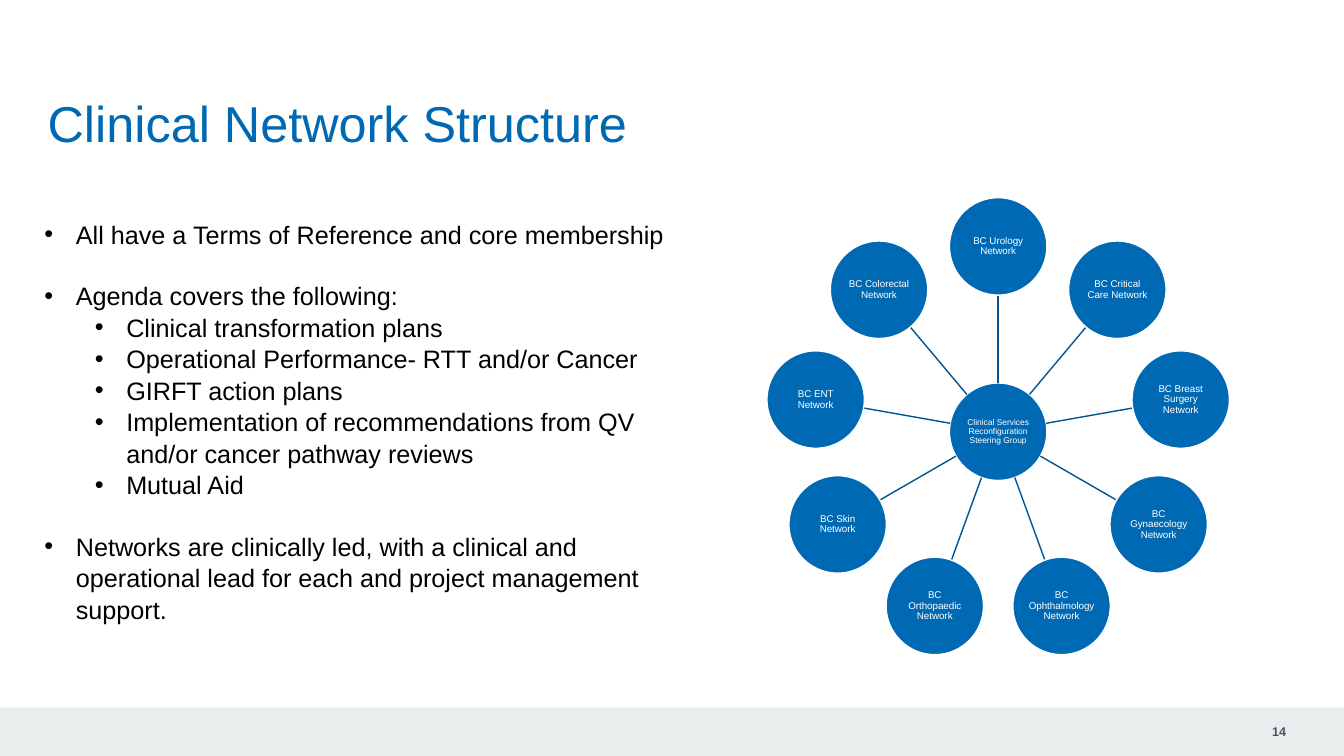
from math import cos, radians, sin

from pptx import Presentation
from pptx.dml.color import RGBColor
from pptx.enum.shapes import MSO_CONNECTOR, MSO_SHAPE
from pptx.enum.text import MSO_ANCHOR, MSO_AUTO_SIZE, PP_ALIGN
from pptx.oxml.ns import qn
from pptx.util import Pt
from lxml.etree import SubElement

BLUE = RGBColor(0x00, 0x69, 0xB3)
DARK_BLUE = RGBColor(0x00, 0x54, 0x8F)
WHITE = RGBColor(0xFF, 0xFF, 0xFF)
BLACK = RGBColor(0x00, 0x00, 0x00)
BAND = RGBColor(0xE8, 0xED, 0xEE)
SLATE = RGBColor(0x43, 0x55, 0x62)

# text, level, starts a new block
POINTS = [
    ("All have a Terms of Reference and core membership", 0, False),
    ("Agenda covers the following:", 0, True),
    ("Clinical transformation plans", 1, False),
    ("Operational Performance- RTT and/or Cancer", 1, False),
    ("GIRFT action plans", 1, False),
    ("Implementation of recommendations from QV and/or cancer pathway reviews", 1, False),
    ("Mutual Aid", 1, False),
    ("Networks are clinically led, with a clinical and operational lead for each "
     "and project management support.", 0, True),
]
HUB = "Clinical Services Reconfiguration Steering Group"
# clockwise from the top
NETWORKS = ["Urology", "Critical Care", "Breast Surgery", "Gynaecology",
            "Ophthalmology", "Orthopaedic", "Skin", "ENT", "Colorectal"]


class Deck:
    font = "Arial"
    indent = 22.5
    level_step = 36
    line_height = 21.6
    node_radius = 34.8

    def __init__(self, prs):
        self.s = prs.slides.add_slide(prs.slide_layouts[1])

    def style(self, p, size, color, bold=False):
        for r in p.runs:
            f = r.font
            f.name, f.size, f.bold = self.font, Pt(size), bold
            f.color.rgb = color

    def place(self, sp, x, y, w, h):
        sp.left, sp.top, sp.width, sp.height = Pt(x), Pt(y), Pt(w), Pt(h)

    def no_margins(self, tf):
        tf.margin_left = tf.margin_right = tf.margin_top = tf.margin_bottom = 0

    def title(self, text, x, y, w, h):
        sp = self.s.shapes.title
        self.place(sp, x, y, w, h)
        tf = sp.text_frame
        tf.text = text
        tf.auto_size = MSO_AUTO_SIZE.NONE
        tf.vertical_anchor = MSO_ANCHOR.TOP
        self.no_margins(tf)
        p = tf.paragraphs[0]
        p.alignment, p.line_spacing = PP_ALIGN.LEFT, 0.9
        self.style(p, 36, BLUE)

    def bullets(self, points, x, y, w, h):
        sp = self.s.placeholders[1]
        self.place(sp, x, y, w, h)
        tf = sp.text_frame
        tf.auto_size = MSO_AUTO_SIZE.NONE
        tf.vertical_anchor = MSO_ANCHOR.TOP
        for i, (text, level, new_block) in enumerate(points):
            p = tf.paragraphs[0] if i == 0 else tf.add_paragraph()
            p.text, p.level = text, level
            p.alignment, p.line_spacing = PP_ALIGN.LEFT, 1.04
            p.space_before = Pt(self.line_height if new_block else 0)
            p.space_after = Pt(0)
            pPr = p._p.get_or_add_pPr()
            pPr.set("marL", str(Pt(self.indent + level * self.level_step)))
            pPr.set("indent", str(-Pt(self.indent)))
            SubElement(pPr, qn("a:buFont")).set("typeface", self.font)
            SubElement(pPr, qn("a:buChar")).set("char", "•")
            self.style(p, 18, BLACK)

    def shape(self, kind, x, y, w, h, fill):
        sp = self.s.shapes.add_shape(kind, Pt(x), Pt(y), Pt(w), Pt(h))
        sp.shadow.inherit = False
        sp.fill.solid()
        sp.fill.fore_color.rgb = fill
        sp.line.fill.background()
        return sp

    def label(self, text, x, y, w, h, size, color):
        tf = self.s.shapes.add_textbox(Pt(x), Pt(y), Pt(w), Pt(h)).text_frame
        self.centre(tf, text, size, color, bold=True)

    def centre(self, tf, text, size, color, bold=False, spacing=1.0):
        tf.text = text
        tf.word_wrap = True
        tf.vertical_anchor = MSO_ANCHOR.MIDDLE
        self.no_margins(tf)
        p = tf.paragraphs[0]
        p.alignment, p.line_spacing = PP_ALIGN.CENTER, spacing
        self.style(p, size, color, bold)

    def node(self, text, cx, cy, size):
        r = self.node_radius
        sp = self.shape(MSO_SHAPE.OVAL, cx - r, cy - r, 2 * r, 2 * r, BLUE)
        sp.line.color.rgb = WHITE
        sp.line.width = Pt(1)
        self.centre(sp.text_frame, text, size, WHITE, spacing=0.9)

    def line(self, x1, y1, x2, y2):
        c = self.s.shapes.add_connector(MSO_CONNECTOR.STRAIGHT,
                                        Pt(x1), Pt(y1), Pt(x2), Pt(y2))
        c.line.color.rgb = DARK_BLUE
        c.line.width = Pt(1)
        SubElement(c._element.spPr, qn("a:effectLst"))

    def radial(self, hub, spokes, cx, cy, ring):
        """Draw the hub with its spokes evenly spread, clockwise from the top."""
        self.node(hub, cx, cy, 6)
        for i, text in enumerate(spokes):
            angle = radians(360 / len(spokes) * i - 90)
            dx, dy = cos(angle), sin(angle)
            near, far = self.node_radius, ring - self.node_radius
            self.line(cx + near * dx, cy + near * dy, cx + far * dx, cy + far * dy)
            self.node(text, cx + ring * dx, cy + ring * dy, 7)


def main():
    prs = Presentation()
    prs.slide_width, prs.slide_height = Pt(960), Pt(540)
    deck = Deck(prs)
    deck.shape(MSO_SHAPE.RECTANGLE, 0, 505.5, 960, 34.5, BAND)
    deck.label("14", 901.5, 505.5, 24.5, 34, 9, SLATE)
    deck.title("Clinical Network Structure", 34, 70.5, 891, 70.5)
    deck.bullets(POINTS, 24.5, 152, 458.5, 269.5)
    deck.radial(HUB, [f"BC {name} Network" for name in NETWORKS], 713, 308.4, 132.4)
    prs.save("out.pptx")


if __name__ == "__main__":
    main()
